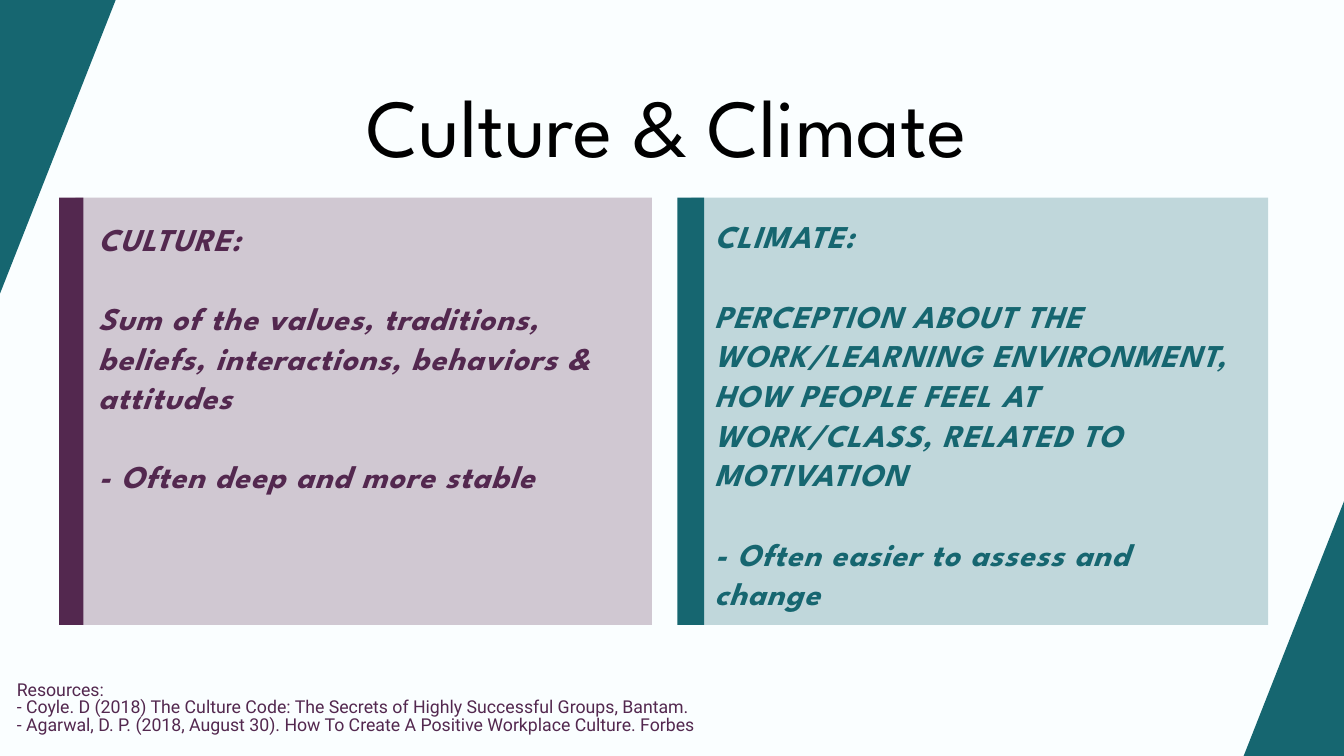
from lxml.etree import SubElement
from pptx import Presentation
from pptx.dml.color import RGBColor
from pptx.enum.shapes import MSO_SHAPE
from pptx.enum.text import MSO_AUTO_SIZE, PP_ALIGN
from pptx.oxml.ns import qn
from pptx.util import Inches, Pt

WIDTH, HEIGHT = 20, 11.25
COLORS = {
    "background": "FAFEFF",
    "title": "000000",
    "plum": "53284F",
    "teal": "166670",
}

# Text formats: font values, then line pitch, paragraph gap and tracking in points
TITLE = {"font": {"name": "League Spartan", "size": Pt(88)}, "line": 105.6}
BODY = {
    "font": {"name": "League Spartan", "size": Pt(34), "bold": True, "italic": True},
    "line": 42.5, "gap": 42.5, "tracking": 1.2,
}
SOURCES = {"font": {"name": "Roboto", "size": Pt(19)}, "line": 19}

# Card row
CARD_TOP, CARD_WIDTH, CARD_HEIGHT = 2.94, 8.58, 6.36
CARDS = [
    {
        "color": "plum", "left": 1.12, "bar": (0.88, 0.36), "text": (1.46, 3.24, 7.9, 4.08),
        "lines": [
            "CULTURE:",
            "Sum of the values, traditions, beliefs, interactions, behaviors & attitudes",
            "- Often deep and more stable",
        ],
    },
    {
        "color": "teal", "left": 10.29, "bar": (10.08, 0.4), "text": (10.63, 3.21, 7.9, 5.83),
        "lines": [
            "CLIMATE:",
            "PERCEPTION ABOUT THE WORK/LEARNING ENVIRONMENT, HOW PEOPLE FEEL AT "
            "WORK/CLASS, RELATED TO MOTIVATION",
            "- Often easier to assess and change",
        ],
    },
]
RESOURCES = [
    "Resources:",
    "- Coyle. D (2018) The Culture Code: The Secrets of Highly Successful Groups, Bantam.",
    "- Agarwal, D. P. (2018, August 30). How To Create A Positive Workplace Culture. Forbes",
]


def rgb(name):
    return RGBColor.from_string(COLORS[name])


def add_block(slide, box, color, opacity=100, rotation=0):
    """Add a plain rectangle without outline."""
    shape = slide.shapes.add_shape(MSO_SHAPE.RECTANGLE, *map(Inches, box))
    shape.shadow.inherit = False
    shape.fill.solid()
    shape.fill.fore_color.rgb = rgb(color)
    shape.line.fill.background()
    shape.rotation = rotation
    if opacity < 100:
        color_element = shape._element.spPr.find(qn("a:solidFill"))[0]
        SubElement(color_element, qn("a:alpha"), val=str(opacity * 1000))


def add_text(slide, box, lines, style, color, align=PP_ALIGN.LEFT):
    """Add a text box with one paragraph per line."""
    frame = slide.shapes.add_textbox(*map(Inches, box)).text_frame
    frame_format = {
        "word_wrap": True, "auto_size": MSO_AUTO_SIZE.SHAPE_TO_FIT_TEXT,
        "margin_left": 0, "margin_top": 0, "margin_right": 0, "margin_bottom": 0,
    }
    for name, value in frame_format.items():
        setattr(frame, name, value)
    for index, line in enumerate(lines):
        paragraph = frame.paragraphs[0] if index == 0 else frame.add_paragraph()
        paragraph.alignment = align
        paragraph.line_spacing = Pt(style["line"])
        if index:
            paragraph.space_before = Pt(style.get("gap", 0))
        run = paragraph.add_run()
        run.text = line
        for name, value in style["font"].items():
            setattr(run.font, name, value)
        run.font.color.rgb = rgb(color)
        if "tracking" in style:
            run._r.get_or_add_rPr().set("spc", str(round(style["tracking"] * 100)))


def main():
    presentation = Presentation()
    presentation.slide_width = Inches(WIDTH)
    presentation.slide_height = Inches(HEIGHT)
    slide = presentation.slides.add_slide(presentation.slide_layouts[6])
    slide.background.fill.solid()
    slide.background.fill.fore_color.rgb = rgb("background")

    # Title
    add_text(slide, (0.96, 1.12, 17.92, 1.46), ["Culture & Climate"],
             TITLE, "title", PP_ALIGN.CENTER)

    # Tinted cards, each with a solid bar on its left edge
    for card in CARDS:
        add_block(slide, (card["left"], CARD_TOP, CARD_WIDTH, CARD_HEIGHT),
                  card["color"], opacity=25)
    for card in CARDS:
        bar_left, bar_width = card["bar"]
        add_block(slide, (bar_left, CARD_TOP, bar_width, CARD_HEIGHT), card["color"])
        add_text(slide, card["text"], card["lines"], BODY, card["color"])

    # Slanted bands across the corners
    for left, top in ((-3.75, 0.18), (16.21, 8.5)):
        add_block(slide, (left, top, 8.04, 1.88), "teal", rotation=291.5)

    # Resources
    add_text(slide, (0.25, 10.15, 17.43, 1.07), RESOURCES, SOURCES, "plum")

    presentation.save("out.pptx")


if __name__ == "__main__":
    main()
